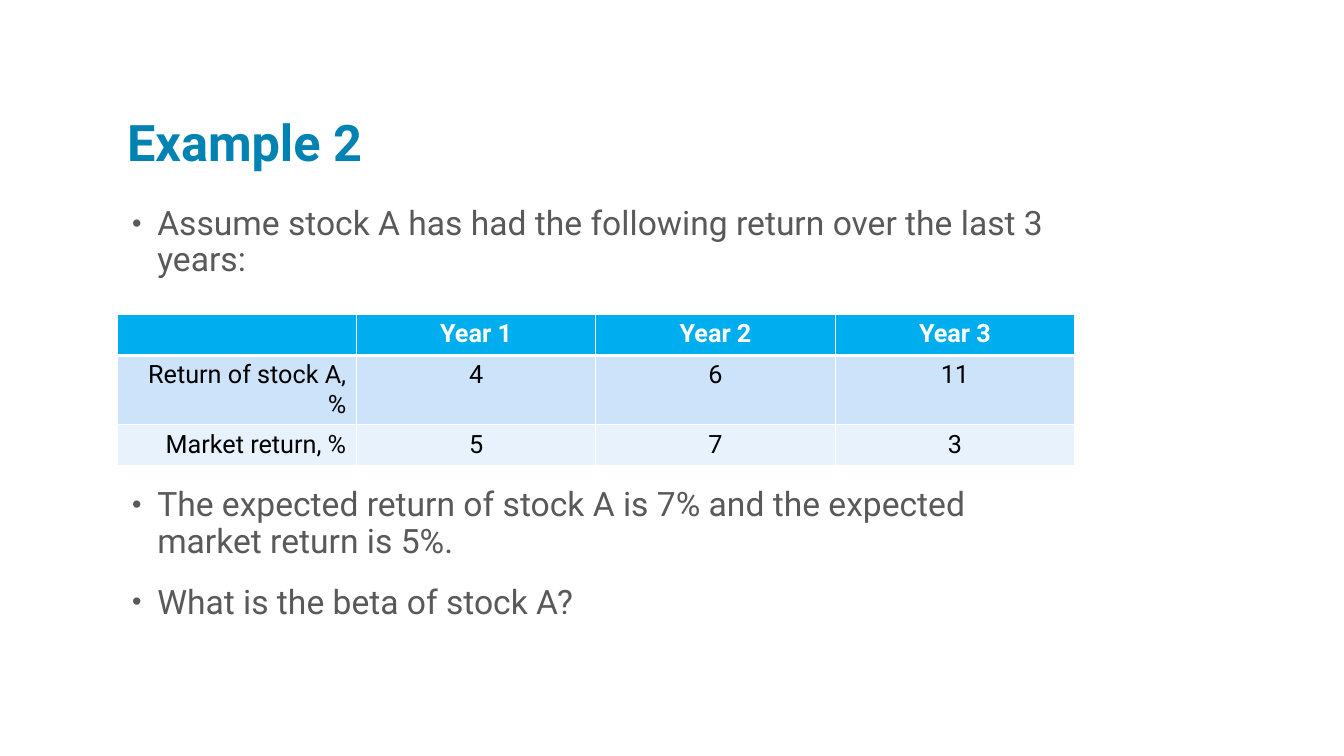
from lxml.etree import SubElement
from pptx import Presentation
from pptx.dml.color import RGBColor
from pptx.enum.text import MSO_ANCHOR, MSO_AUTO_SIZE, PP_ALIGN
from pptx.oxml.ns import qn
from pptx.util import Inches, Pt

COLORS = {"title": "0083B3", "body": "595959", "header": "00AEEF",
          "band1": "CCE3F9", "band2": "E7F2FC", "white": "FFFFFF",
          "black": "000000"}
LEFT, WIDTH = Inches(1.16), Inches(9.5)


def write(p, text, size=18, color="black", bold=False, align=PP_ALIGN.LEFT,
          line=1.0, before=0):
    p.alignment, p.line_spacing, p.space_before = align, line, Pt(before)
    r = p.add_run()
    r.text = text
    r.font.name, r.font.size, r.font.bold = "Roboto", Pt(size), bold
    r.font.color.rgb = RGBColor.from_string(COLORS[color])


prs = Presentation()
prs.slide_width, prs.slide_height = Inches(13.33), Inches(7.5)
s = prs.slides.add_slide(prs.slide_layouts[1])

# Title
title, body = s.placeholders
title.left, title.top, title.width, title.height = LEFT, Inches(0.58), WIDTH, Inches(1.17)
tf = title.text_frame
tf.auto_size, tf.vertical_anchor = MSO_AUTO_SIZE.NONE, MSO_ANCHOR.BOTTOM
write(tf.paragraphs[0], "Example 2", size=36, color="title", bold=True, line=0.8)

# Bullets, with room for the table before the second one
body.left, body.top, body.width, body.height = LEFT, Inches(2), WIDTH, Inches(4.58)
tf = body.text_frame
tf.auto_size = MSO_AUTO_SIZE.NONE
bullets = [
    ("Assume stock A has had the following return over the last 3 years:", 0),
    ("The expected return of stock A is 7% and the expected market return is 5%.", 149),
    ("What is the beta of stock A?", 18),
]
for i, (text, before) in enumerate(bullets):
    p = tf.add_paragraph() if i else tf.paragraphs[0]
    write(p, text, size=24, color="body", line=0.9, before=before)
    pPr = p._p.get_or_add_pPr()
    pPr.set("marL", str(Inches(0.3)))
    pPr.set("indent", str(Inches(-0.25)))
    SubElement(SubElement(pPr, qn("a:buClr")), qn("a:srgbClr"), val=COLORS["body"])
    SubElement(pPr, qn("a:buSzPct"), val="80000")
    SubElement(pPr, qn("a:buFont"), typeface="Arial")
    SubElement(pPr, qn("a:buChar"), char="•")

# Table of returns
rows = [
    ["", "Year 1", "Year 2", "Year 3"],
    ["Return of stock A, %", "4", "6", "11"],
    ["Market return, %", "5", "7", "3"],
]
fills = ["header", "band1", "band2"]
table = s.shapes.add_table(3, 4, LEFT, Inches(3.12), WIDTH, Inches(1.22)).table
for i, row in enumerate(rows):
    for j, text in enumerate(row):
        cell = table.cell(i, j)
        if text:
            write(cell.text_frame.paragraphs[0], text, bold=i == 0,
                  color="black" if i else "white",
                  align=PP_ALIGN.CENTER if j else PP_ALIGN.RIGHT)
        # White borders, thicker under the header
        tcPr = cell._tc.get_or_add_tcPr()
        for side in "LRTB":
            thick = (i, side) in [(0, "B"), (1, "T")]
            ln = SubElement(tcPr, qn("a:ln" + side), w=str(Pt(3 if thick else 1)))
            SubElement(SubElement(ln, qn("a:solidFill")), qn("a:srgbClr"),
                       val=COLORS["white"])
        cell.fill.solid()
        cell.fill.fore_color.rgb = RGBColor.from_string(COLORS[fills[i]])

prs.save("out.pptx")
